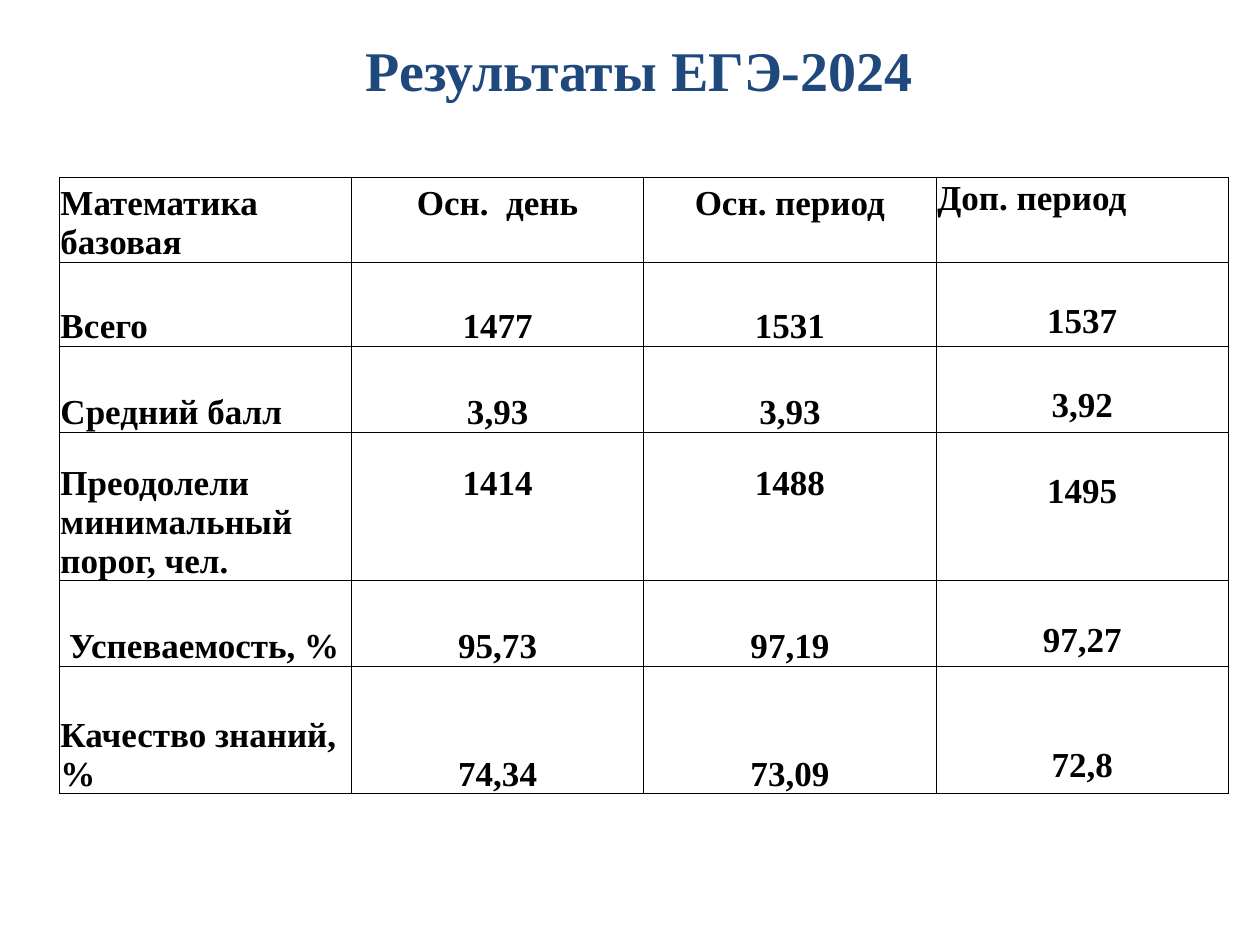
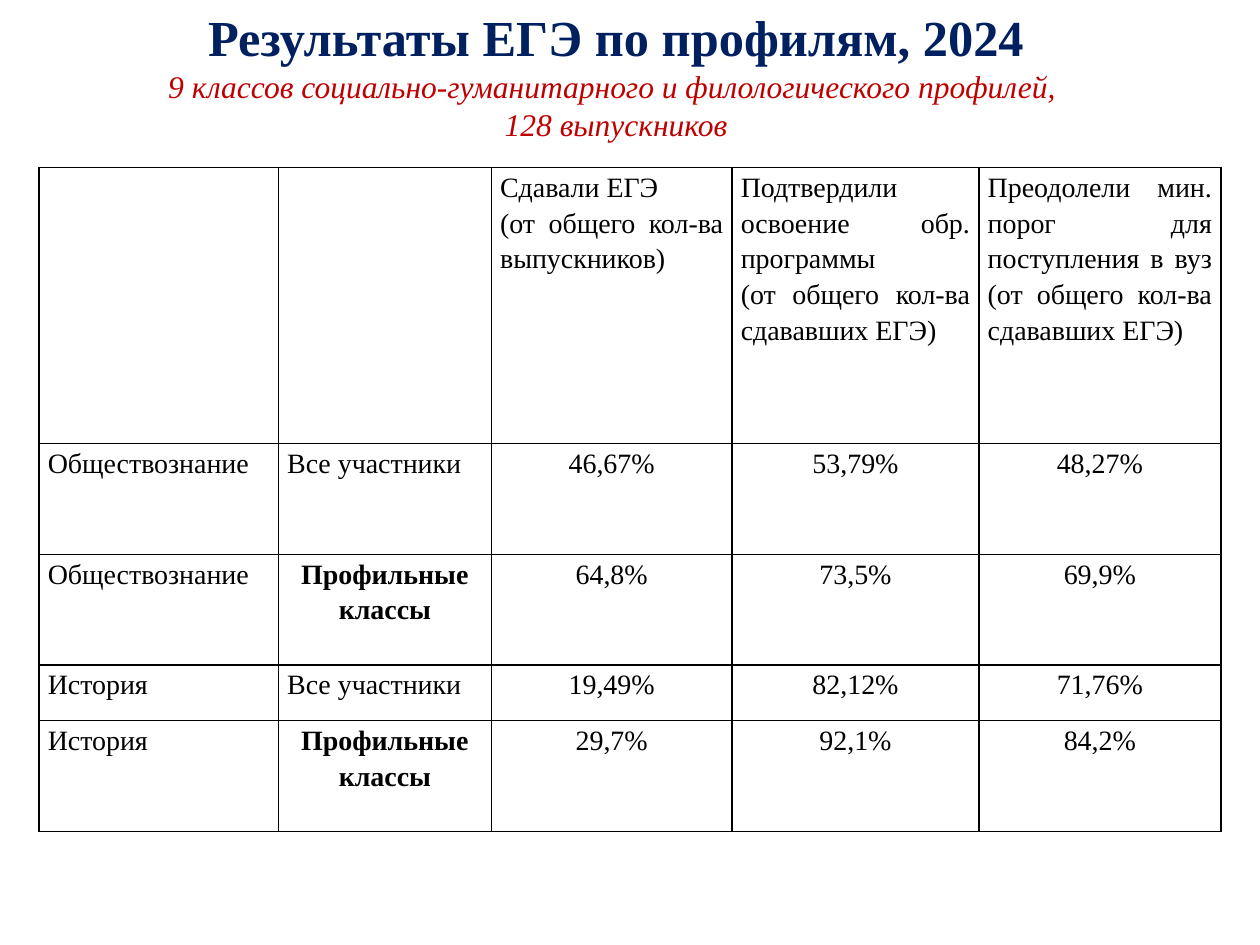
from pptx import Presentation
from pptx.util import Inches, Pt
from pptx.dml.color import RGBColor as RGB
from pptx.enum.text import PP_ALIGN as Align, MSO_ANCHOR as Anchor, MSO_AUTO_SIZE as Auto
from lxml.etree import fromstring

FONT = "Times New Roman"
HUES = {"blue": "1F497D", "navy": "002060", "red": "C00000", "ink": "000000"}
NS = "http://schemas.openxmlformats.org/drawingml/2006/main"


def style(par, size, hue, bold=False, italic=False, align=Align.CENTER):
    par.alignment = align
    for run in par.runs:
        font = run.font
        font.name, font.size = FONT, Pt(size)
        font.bold, font.italic = bold, italic
        font.color.rgb = RGB.from_string(HUES[hue])


def grid(slide, left, top, cols, rows, line):
    frame = slide.shapes.add_table(len(rows), len(cols), Inches(left), Inches(top),
                                   Inches(sum(cols)), Inches(sum(rows)))
    table = frame.table
    table.first_row = table.horz_banding = False
    for col, width in zip(table.columns, cols):
        col.width = Inches(width)
    for row, height in zip(table.rows, rows):
        row.height = Inches(height)
    for cell in table.iter_cells():
        props = cell._tc.get_or_add_tcPr()
        for side in ("lnL", "lnR", "lnT", "lnB"):
            props.append(fromstring(
                f'<a:{side} xmlns:a="{NS}" w="{Pt(line)}"><a:solidFill>'
                f'<a:srgbClr val="{HUES["ink"]}"/></a:solidFill></a:{side}>'))
        cell.fill.background()
    return table


deck = Presentation()
deck.slide_width, deck.slide_height = Inches(10), Inches(7.5)

heads = [
    ("Результаты ЕГЭ-2024", (0.31, 0.23, 9.53, 0.64), Anchor.TOP, 32, "blue"),
    ("Результаты ЕГЭ по профилям, 2024\n"
     "9 классов социально-гуманитарного и филологического профилей, \n"
     "128 выпускников", (0.39, 0.16, 9, 0.86), Anchor.MIDDLE, 28.8, "navy"),
]
slides = []
for text, box, anchor, size, hue in heads:
    slide = deck.slides.add_slide(deck.slide_layouts[5])
    title = slide.shapes.title
    title.left, title.top, title.width, title.height = map(Inches, box)
    frame = title.text_frame
    frame.text = text
    frame.word_wrap, frame.auto_size = True, Auto.NONE
    frame.vertical_anchor = anchor
    first, *rest = frame.paragraphs
    style(first, size, hue, bold=True)
    for par in rest:
        style(par, 18, "red", italic=True)
    slides.append(slide)

scores = [
    ["Математика базовая", "Осн.  день", "Осн. период", "Доп. период"],
    ["Всего", "1477", "1531", "1537"],
    ["Средний балл", "3,93", "3,93", "3,92"],
    ["Преодолели минимальный порог, чел.", "1414", "1488", "1495"],
    [" Успеваемость, %", "95,73", "97,19", "97,27"],
    ["Качество знаний, %", "74,34", "73,09", "72,8"],
]
step = 0.31
lifts = [1, 0, 0, 2, 0, 0]
drops = [0, 1, 1, 1, 1, 2]
table = grid(slides[0], 0.47, 1.41, [2.32] * 4, [0.67, 0.67, 0.68, 1.18, 0.68, 1.01], 0.5)
for r, row in enumerate(scores):
    for c, text in enumerate(row):
        cell = table.cell(r, c)
        cell.text_frame.text = text
        last = c == 3
        cell.vertical_anchor = Anchor.TOP if last else Anchor.BOTTOM
        cell.margin_left = cell.margin_right = Inches(0.01)
        cell.margin_top = Inches(0.01 + step * drops[r] * last)
        cell.margin_bottom = Inches(step * lifts[r] * (c in (1, 2)))
        left = c == 0 or (last and r == 0)
        style(cell.text_frame.paragraphs[0], 20, "ink", bold=True,
              align=Align.LEFT if left else Align.CENTER)

group = "Профильные классы"
shares = [
    ["", "", "Сдавали ЕГЭ\n(от общего кол-ва выпускников)",
     "Подтвердили освоение обр. программы\n(от общего кол-ва сдававших ЕГЭ)",
     "Преодолели мин. порог для поступления в вуз (от общего кол-ва сдававших ЕГЭ)"],
    ["Обществознание", "Все участники", "46,67%", "53,79%", "48,27%"],
    ["Обществознание", group, "64,8%", "73,5%", "69,9%"],
    ["История", "Все участники", "19,49%", "82,12%", "71,76%"],
    ["История", group, "29,7%", "92,1%", "84,2%"],
]
table = grid(slides[1], 0.31, 1.33, [1.9, 1.69, 1.91, 1.96, 1.92],
             [2.19, 0.88, 0.88, 0.44, 0.88], 1)
for r, row in enumerate(shares):
    for c, text in enumerate(row):
        cell = table.cell(r, c)
        cell.text_frame.text = text
        cell.margin_left = cell.margin_right = Inches(0.07)
        cell.margin_top = cell.margin_bottom = 0
        bold = text == group
        mid = bold or (r > 0 and c > 1)
        for par in cell.text_frame.paragraphs:
            par.line_spacing = 1.15
            style(par, 16, "ink", bold=bold, align=Align.CENTER if mid else Align.JUSTIFY)

deck.save("out.pptx")
